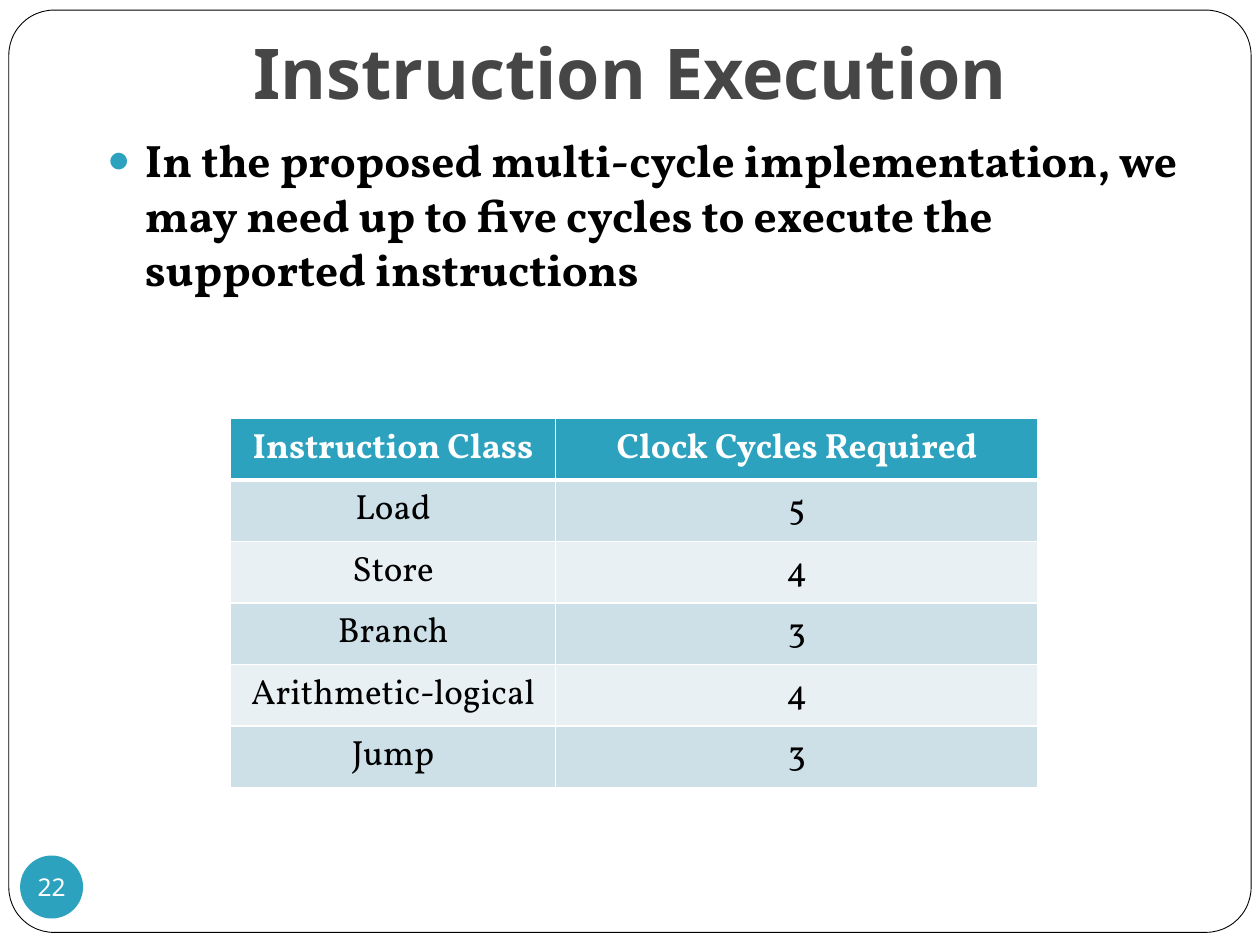
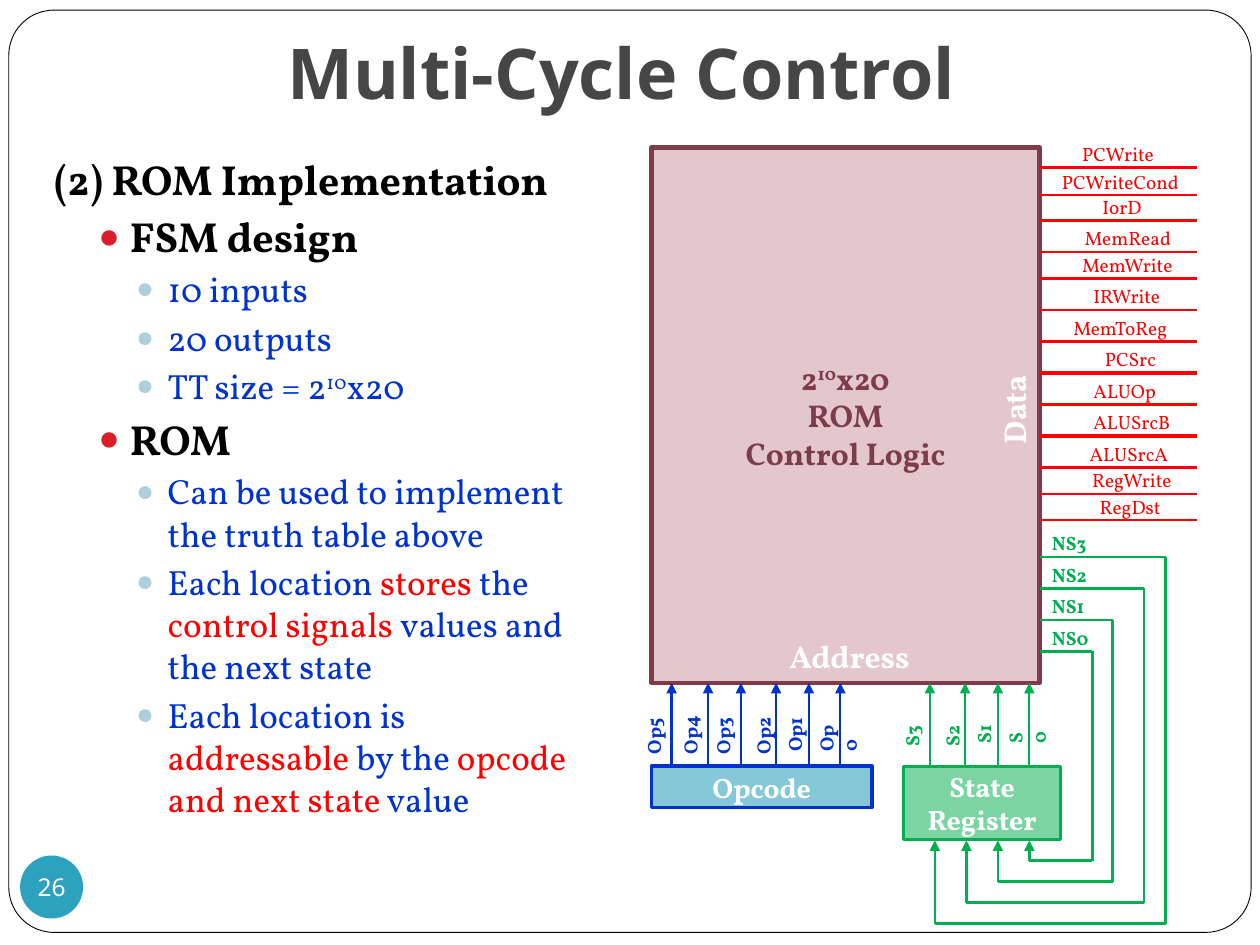
from dataclasses import dataclass, field
from itertools import pairwise
from typing import Any

from lxml.etree import SubElement
from pptx import Presentation
from pptx.dml.color import RGBColor
from pptx.enum.shapes import MSO_CONNECTOR as Connector, MSO_SHAPE as Preset
from pptx.enum.text import MSO_ANCHOR as Anchor, MSO_AUTO_SIZE as AutoSize, PP_ALIGN as Align
from pptx.oxml.ns import qn
from pptx.util import Inches, Pt

TEAL, WHITE, BLACK, GRAY = "2DA2BF", "FFFFFF", "000000", "464646"
BLUE, RED, GREEN, MAROON = "0033CC", "FF0000", "00B050", "7D3C4A"
HEADING_FONT, BODY_FONT = "Noto Sans", "Vollkorn"


@dataclass
class Run:
    text: str
    color: str | None = None
    superscript: bool = False


@dataclass
class Style:
    size: float
    color: str
    bold: bool = False
    name: str = BODY_FONT
    align: Any = None


@dataclass
class Level:
    style: Style
    margin: float
    indent: float
    space_before: float
    bullet_color: str | None = None


@dataclass
class Item:
    level: Level
    runs: list[Run]


@dataclass
class Block:
    box: tuple[float, float, float, float]
    fill: str
    line: str | None
    line_width: float
    style: Style
    paragraphs: list[list[Run]] = field(default_factory=list)
    opacity: int = 100
    preset: Any = Preset.RECTANGLE


@dataclass
class Signal:
    name: str
    line_y: float
    label_left: float
    label_width: float
    line_width: float = 1.25


@dataclass
class AddressBit:
    name: str
    arrow_x: float
    label_x: float
    label_width: float
    color: str


TITLE = Style(40, GRAY, True, HEADING_FONT, Align.CENTER)
NUMBER = Style(14, WHITE, False, HEADING_FONT, Align.CENTER)
LEAD = Level(Style(26, BLACK, True), 0.3, -0.3, 5.8, TEAL)
SECTION = Level(Style(24, BLACK, True), 0.3, -0.3, 5.8)
TOPIC = Level(Style(24, BLACK, True), 0.6, -0.25, 3.7, "DA1F28")
DETAIL = Level(Style(20, BLUE), 0.9, -0.25, 3.7, "ADCEDC")
ROM_SIZE = [Run("2"), Run("10", superscript=True), Run("x20")]

INTRO = [Item(LEAD, [Run("In the proposed multi-cycle implementation, we may need up to "
                         "five cycles to execute the supported instructions")])]
CYCLES = [("Instruction Class", "Clock Cycles Required"), ("Load", "5"), ("Store", "4"),
          ("Branch", "3"), ("Arithmetic-logical", "4"), ("Jump", "3")]
ROM_NOTES = [
    Item(SECTION, [Run("(2) ROM Implementation")]),
    Item(TOPIC, [Run("FSM design")]),
    Item(DETAIL, [Run("10 inputs")]),
    Item(DETAIL, [Run("20 outputs")]),
    Item(DETAIL, [Run("TT size = "), *ROM_SIZE]),
    Item(TOPIC, [Run("ROM")]),
    Item(DETAIL, [Run("Can be used to implement the truth table above")]),
    Item(DETAIL, [Run("Each location "), Run("stores", RED), Run(" the "),
                  Run("control signals ", RED), Run("values and the next state")]),
    Item(DETAIL, [Run("Each location is "), Run("addressable", RED), Run(" by the "),
                  Run("opcode and next state", RED), Run(" value")]),
]

ROM_BLOCK = Block((5.17, 1.17, 3.08, 4.25), "D5A7B1", MAROON, 2.5,
                  Style(18, MAROON, True, align=Align.CENTER),
                  [ROM_SIZE, [Run("ROM")], [Run("Control Logic")]], 64)
BLOCK_LABEL = Style(16, WHITE, True, align=Align.CENTER)
SOURCES = [
    Block((7.17, 6.08, 1.25, 0.58), GREEN, GREEN, 1.75, BLOCK_LABEL,
          [[Run("State Register")]], 52),
    Block((5.17, 6.08, 1.75, 0.33), TEAL, BLUE, 2, BLOCK_LABEL, [[Run("Opcode")]], 58),
]
SIGNALS = [
    Signal("PCWrite", 1.33, 8.49, 0.79), Signal("PCWriteCond", 1.55, 8.33, 1.17),
    Signal("IorD", 1.75, 8.65, 0.52), Signal("MemRead", 2, 8.51, 0.91),
    Signal("MemWrite", 2.21, 8.49, 0.94), Signal("IRWrite", 2.46, 8.58, 0.74),
    Signal("MemToReg", 2.71, 8.42, 1), Signal("PCSrc", 2.96, 8.67, 0.61, 2),
    Signal("ALUOp", 3.21, 8.58, 0.75, 2), Signal("ALUSrcB", 3.46, 8.58, 0.84, 2),
    Signal("ALUSrcA", 3.71, 8.55, 0.86), Signal("RegWrite", 3.92, 8.57, 0.85),
    Signal("RegDst", 4.13, 8.63, 0.7),
]
ADDRESS_BITS = [
    AddressBit("Op5", 5.33, 5.19, 0.54, BLUE), AddressBit("Op4", 5.62, 5.48, 0.54, BLUE),
    AddressBit("Op3", 5.88, 5.74, 0.54, BLUE), AddressBit("Op2", 6.16, 6.06, 0.54, BLUE),
    AddressBit("Op1", 6.42, 6.31, 0.5, BLUE), AddressBit("Op0", 6.67, 6.56, 0.5, BLUE),
    AddressBit("S3", 7.38, 7.24, 0.41, GREEN), AddressBit("S2", 7.66, 7.56, 0.41, GREEN),
    AddressBit("S1", 7.92, 7.81, 0.37, GREEN), AddressBit("S0", 8.17, 8.06, 0.37, GREEN),
]
FEEDBACK_TURNS = [8.67, 8.83, 9.08, 9.25]
ROM_RIGHT, ROM_BOTTOM, REGISTER_TOP, REGISTER_BOTTOM = 8.25, 5.42, 6.08, 6.67
LABEL_HEIGHT = 0.29


def rgb(color: str) -> RGBColor:
    return RGBColor.from_string(color)


def apply(target: Any, values: dict[str, Any]) -> None:
    for name, value in values.items():
        setattr(target, name, value)


def inches(values: tuple[float, ...]) -> list[int]:
    return [Inches(value) for value in values]


def place(shape: Any, box: tuple[float, float, float, float]) -> None:
    apply(shape, dict(zip(("left", "top", "width", "height"), inches(box))))


def add_runs(paragraph: Any, runs: list[Run], style: Style) -> None:
    if style.align is not None:
        paragraph.alignment = style.align
    for part in runs:
        run = paragraph.add_run()
        run.text = part.text
        apply(run.font, {"name": style.name, "size": Pt(style.size), "bold": style.bold})
        run.font.color.rgb = rgb(part.color or style.color)
        if part.superscript:
            run._r.get_or_add_rPr().set("baseline", "30000")


def write(frame: Any, paragraphs: list[list[Run]], style: Style) -> None:
    for index, runs in enumerate(paragraphs):
        paragraph = frame.add_paragraph() if index else frame.paragraphs[0]
        add_runs(paragraph, runs, style)


def set_bullet(paragraph: Any, level: Level) -> None:
    properties = paragraph._p.get_or_add_pPr()
    properties.set("marL", str(Inches(level.margin)))
    properties.set("indent", str(Inches(level.indent)))
    if level.bullet_color is None:
        SubElement(properties, qn("a:buNone"))
        return
    color = SubElement(properties, qn("a:buClr"))
    SubElement(color, qn("a:srgbClr"), val=level.bullet_color)
    SubElement(properties, qn("a:buSzPct"), val="85000")
    SubElement(properties, qn("a:buChar"), char="●")


def fill_body(slide: Any, box: tuple[float, float, float, float], items: list[Item]) -> None:
    body = slide.placeholders[1]
    place(body, box)
    frame = body.text_frame
    frame.auto_size = AutoSize.NONE
    for index, item in enumerate(items):
        paragraph = frame.add_paragraph() if index else frame.paragraphs[0]
        paragraph.space_before = Pt(item.level.space_before)
        set_bullet(paragraph, item.level)
        add_runs(paragraph, item.runs, item.level.style)


def add_block(slide: Any, block: Block) -> Any:
    shape = slide.shapes.add_shape(block.preset, *inches(block.box))
    shape.shadow.inherit = False
    shape.fill.solid()
    shape.fill.fore_color.rgb = rgb(block.fill)
    if block.opacity < 100:
        color = shape.element.spPr.find(qn("a:solidFill")).find(qn("a:srgbClr"))
        SubElement(color, qn("a:alpha"), val=str(block.opacity * 1000))
    if block.line:
        shape.line.color.rgb = rgb(block.line)
        shape.line.width = Pt(block.line_width)
    else:
        shape.line.fill.background()
    shape.text_frame.vertical_anchor = Anchor.MIDDLE
    write(shape.text_frame, block.paragraphs, block.style)
    return shape


def add_label(slide: Any, text: str, box: tuple[float, float, float, float], style: Style,
              rotation: float = 0, wrap: bool = False) -> None:
    label = slide.shapes.add_textbox(*inches(box))
    label.rotation = rotation
    apply(label.text_frame, {"word_wrap": wrap, "auto_size": AutoSize.SHAPE_TO_FIT_TEXT})
    write(label.text_frame, [[Run(text)]], style)


def add_line(slide: Any, start: tuple[float, float], end: tuple[float, float],
             color: str, width: float, arrow: bool = False) -> None:
    line = slide.shapes.add_connector(Connector.STRAIGHT, *inches(start + end))
    line.line.color.rgb = rgb(color)
    line.line.width = Pt(width)
    properties = line.element.spPr
    if arrow:
        SubElement(properties.find(qn("a:ln")), qn("a:tailEnd"), type="triangle")
    SubElement(properties, qn("a:effectLst"))


def add_base_slide(presentation: Any, heading: str, number: int) -> Any:
    slide = presentation.slides.add_slide(presentation.slide_layouts[1])
    frame = add_block(slide, Block((0.07, 0.08, 9.86, 7.32), WHITE, BLACK, 0.5, NUMBER,
                                   preset=Preset.ROUNDED_RECTANGLE))
    frame.adjustments[0] = 0.049
    frame.element.getparent().insert(2, frame.element)
    title = slide.shapes.title
    place(title, (0.75, 0.05, 8.5, 0.95))
    apply(title.text_frame, {"vertical_anchor": Anchor.BOTTOM, "auto_size": AutoSize.NONE,
                             "margin_bottom": Inches(0.1)})
    write(title.text_frame, [[Run(heading)]], TITLE)
    badge = add_block(slide, Block((0.16, 6.79, 0.5, 0.5), TEAL, None, 0, NUMBER,
                                   [[Run(str(number))]], preset=Preset.OVAL))
    margins = ("margin_left", "margin_top", "margin_right", "margin_bottom")
    apply(badge.text_frame, {**dict.fromkeys(margins, 0), "word_wrap": False})
    return slide


def format_cell(cell: Any, text: str, row: int) -> None:
    properties = cell._tc.get_or_add_tcPr()
    bottom = 3 if row == 0 else 1
    top = 3 if row == 1 else 1
    for side, width in {"lnL": 1, "lnR": 1, "lnT": top, "lnB": bottom}.items():
        border = SubElement(properties, qn(f"a:{side}"), w=str(Pt(width)))
        SubElement(SubElement(border, qn("a:solidFill")), qn("a:srgbClr"), val=WHITE)
    cell.fill.solid()
    band = "CDE0E8" if row % 2 else "E8F0F4"
    cell.fill.fore_color.rgb = rgb(band if row else TEAL)
    style = Style(20, BLACK if row else WHITE, row == 0, align=Align.CENTER)
    write(cell.text_frame, [[Run(text)]], style)


def add_cycle_table(slide: Any) -> None:
    box = inches((1.83, 3.32, 6.42, 2.6))
    table = slide.shapes.add_table(len(CYCLES), 2, *box).table
    for column, width in zip(table.columns, (2.58, 3.83)):
        column.width = Inches(width)
    for row, texts in enumerate(CYCLES):
        table.rows[row].height = Inches(0.41)
        for column, text in enumerate(texts):
            format_cell(table.cell(row, column), text, row)


def add_rom_diagram(slide: Any) -> None:
    add_block(slide, ROM_BLOCK)
    port = Style(18, WHITE, True, align=Align.CENTER)
    add_label(slide, "Data", (6.63, 3.05, 2.83, 0.4), port, 270, True)
    add_label(slide, "Address", (5.33, 5.01, 2.83, 0.4), port, wrap=True)
    for block in SOURCES:
        add_block(slide, block)
    for signal in SIGNALS:
        box = (signal.label_left, signal.line_y - 0.25, signal.label_width, LABEL_HEIGHT)
        add_label(slide, signal.name, box, Style(11, RED))
        add_line(slide, (ROM_RIGHT, signal.line_y), (9.5, signal.line_y), RED, signal.line_width)
    for bit in ADDRESS_BITS:
        add_line(slide, (bit.arrow_x, REGISTER_TOP), (bit.arrow_x, ROM_BOTTOM),
                 bit.color, 1.25, True)
        box = (bit.label_x - bit.label_width / 2, 5.67, bit.label_width, LABEL_HEIGHT)
        add_label(slide, bit.name, box, Style(11, bit.color, True), 270)
    for index, turn_x in enumerate(FEEDBACK_TURNS):
        start_y, bottom_y = 5.17 - 0.25 * index, 6.83 + index / 6
        return_x = 8.17 - 0.25 * index
        route = [(ROM_RIGHT, start_y), (turn_x, start_y), (turn_x, bottom_y),
                 (return_x, bottom_y), (return_x, REGISTER_BOTTOM)]
        for start, end in pairwise(route):
            add_line(slide, start, end, GREEN, 1.5, end == route[-1])
        add_label(slide, f"NS{index}", (ROM_RIGHT, start_y - 0.25, 0.5, LABEL_HEIGHT),
                  Style(11, GREEN, True))


def main() -> None:
    presentation = Presentation()
    presentation.slide_width, presentation.slide_height = Inches(10), Inches(7.5)
    execution = add_base_slide(presentation, "Instruction Execution", 22)
    fill_body(execution, (0.75, 1, 8.75, 6.25), INTRO)
    add_cycle_table(execution)
    control = add_base_slide(presentation, "Multi-Cycle Control ", 26)
    fill_body(control, (0.33, 1.17, 4.33, 5.92), ROM_NOTES)
    add_rom_diagram(control)
    presentation.save("out.pptx")


if __name__ == "__main__":
    main()
